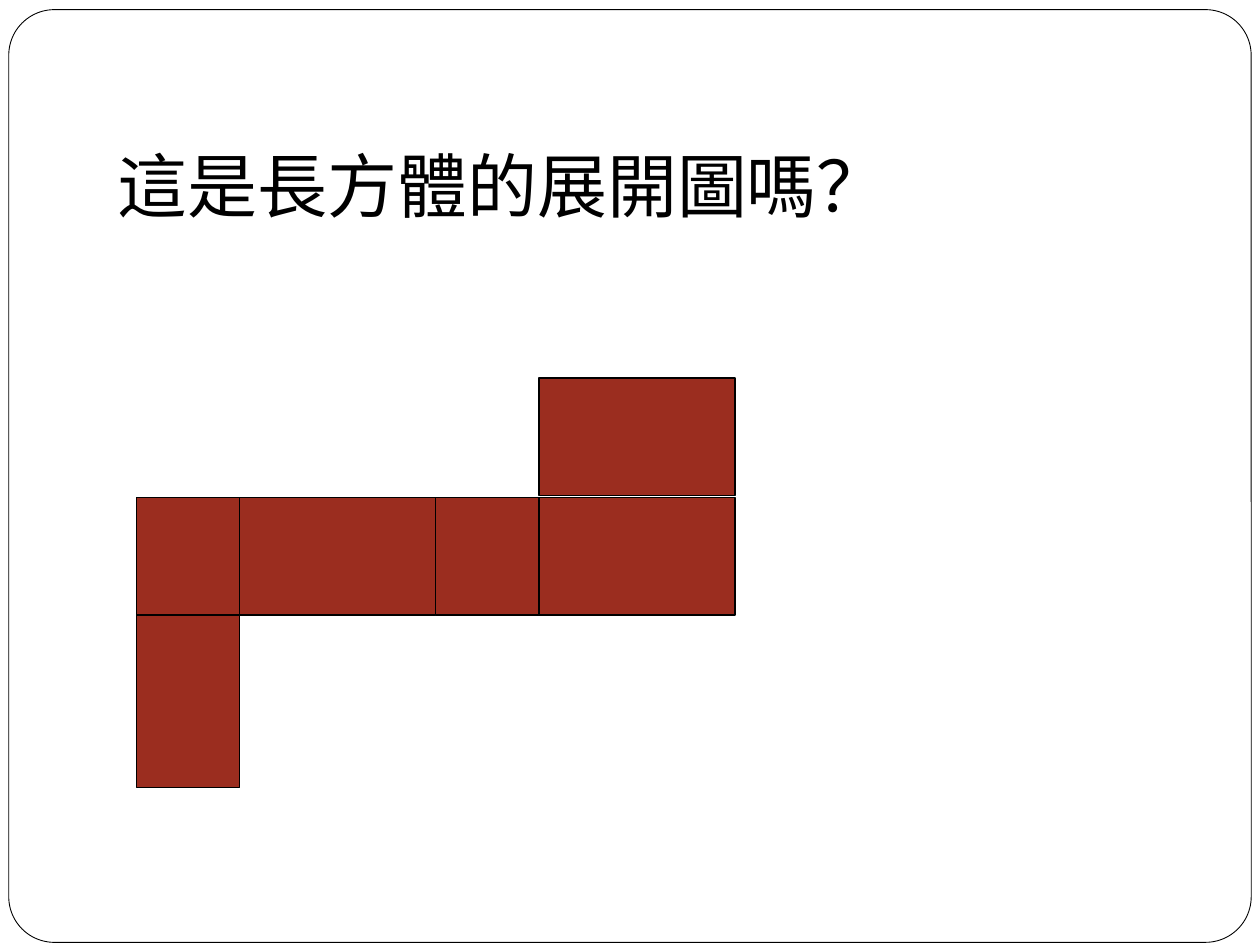
from lxml import etree
from pptx import Presentation
from pptx.dml.color import RGBColor
from pptx.enum.shapes import MSO_SHAPE
from pptx.enum.text import MSO_ANCHOR, PP_ALIGN
from pptx.oxml.ns import qn
from pptx.util import Pt

RECTANGLE = MSO_SHAPE.RECTANGLE
ROUNDED = MSO_SHAPE.ROUNDED_RECTANGLE
MIDDLE = MSO_ANCHOR.MIDDLE
LEFT = PP_ALIGN.LEFT
COLORS = {"paper": "FFFFFF", "ink": "000000", "face": "9B2D1F"}
FONT = "Noto Sans CJK JP"


def color(name):
    """Return the named colour."""
    return RGBColor.from_string(COLORS[name])


def add_panel(shapes, kind, box, fill, line_width):
    """Add a filled, outlined shape in a box of points."""
    panel = shapes.add_shape(kind, *(Pt(length) for length in box))
    panel.shadow.inherit = False
    panel.fill.solid()
    panel.fill.fore_color.rgb = color(fill)
    panel.line.color.rgb = color("ink")
    panel.line.width = Pt(line_width)
    return panel


def add_frame(page, box):
    """Place the rounded page frame behind the title."""
    frame = add_panel(page.shapes, ROUNDED, box, "paper", 0.5)
    frame.adjustments[0] = 0.049
    page.shapes.title._element.addprevious(frame._element)


def fill_title(page, box, words):
    """Move the title placeholder into the box and format its words."""
    title = page.shapes.title
    title.left, title.top, title.width, title.height = (Pt(length) for length in box)
    frame = title.text_frame
    frame.text = words
    frame.word_wrap = True
    frame.vertical_anchor = MIDDLE
    para = frame.paragraphs[0]
    para.alignment = LEFT
    span = para.runs[0]
    span.font.size = Pt(40)
    span.font.name = FONT
    span.font.color.rgb = color("ink")
    etree.SubElement(span.font._element, qn("a:ea"), typeface=FONT)


def add_cuboid_net(page, box):
    """Draw six faces of a net, sized from the box, as one group."""
    left, top, width, height = box
    narrow, gap = 59, 1.4
    wide = width / 2 - narrow
    short = 67
    row_top = top + short + gap
    row_bottom = row_top + short
    net = page.shapes.add_group_shape()
    face_left = left
    for face_width in (narrow, wide, narrow, wide):
        face = (face_left, row_top, face_width, short)
        add_panel(net.shapes, RECTANGLE, face, "face", 0.75)
        face_left += face_width
    lower = (left, row_bottom, narrow, top + height - row_bottom)
    upper = (left + width - wide, top, wide, short)
    for face in (lower, upper):
        add_panel(net.shapes, RECTANGLE, face, "face", 0.75)


def main():
    """Build and save the slide."""
    deck = Presentation()
    deck.slide_width, deck.slide_height = Pt(720), Pt(540)
    page = deck.slides.add_slide(deck.slide_layouts[5])
    add_frame(page, (5, 5.5, 710, 533))
    fill_title(page, (60, 77.8, 468, 55.4), "這是長方體的展開圖嗎？")
    add_cuboid_net(page, (78, 216, 342, 234))
    deck.save("out.pptx")


if __name__ == "__main__":
    main()
